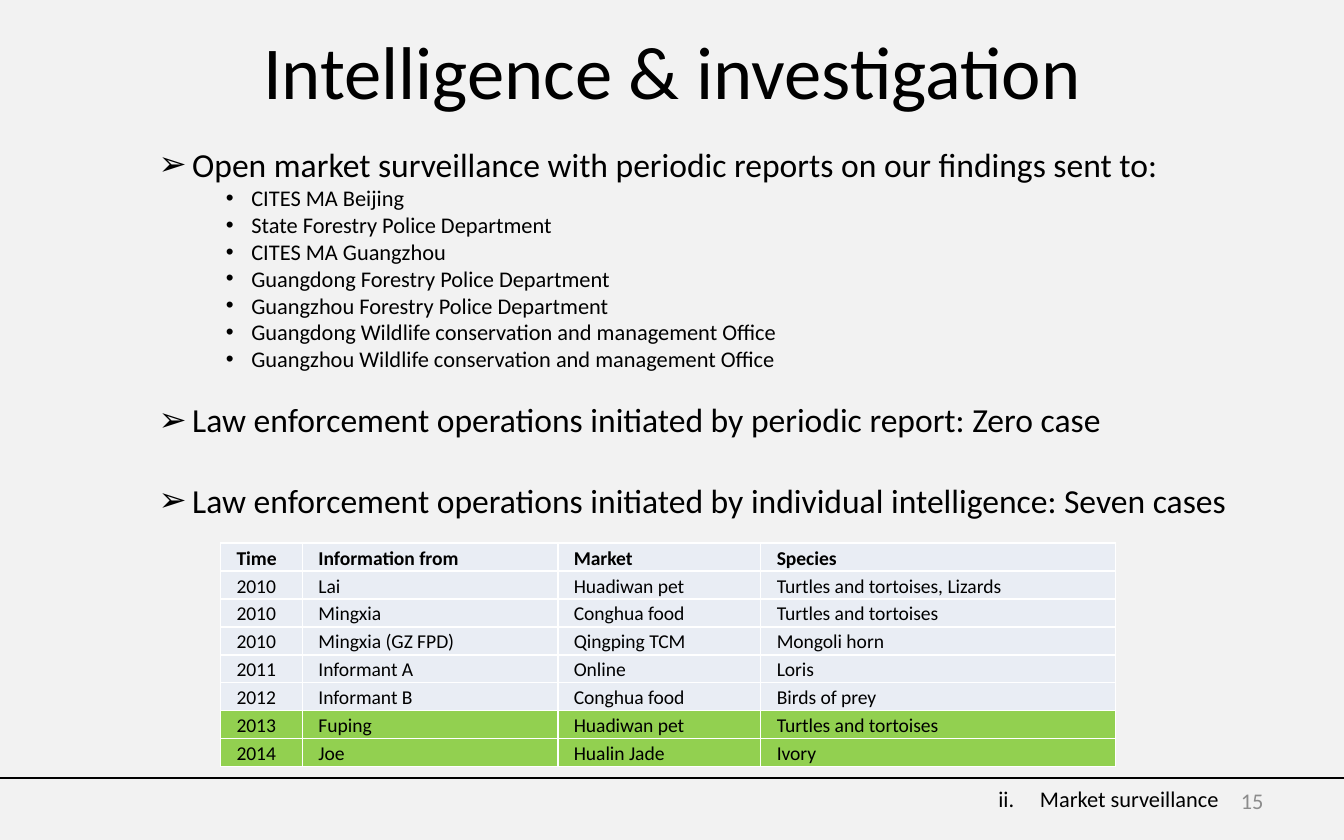
from lxml import etree
from pptx import Presentation
from pptx.dml.color import RGBColor
from pptx.enum.shapes import MSO_CONNECTOR
from pptx.enum.text import MSO_ANCHOR, MSO_AUTO_SIZE, PP_ALIGN
from pptx.oxml.ns import qn
from pptx.util import Inches, Pt

STRAIGHT = MSO_CONNECTOR.STRAIGHT
TOP, MIDDLE = MSO_ANCHOR.TOP, MSO_ANCHOR.MIDDLE
NO_FIT = MSO_AUTO_SIZE.NONE
LEFT, CENTER, RIGHT = PP_ALIGN.LEFT, PP_ALIGN.CENTER, PP_ALIGN.RIGHT

FONT = "Calibri"
BLACK = RGBColor(0x00, 0x00, 0x00)
GREY = RGBColor(0x8C, 0x8C, 0x8C)
BACKGROUND = RGBColor(0xF2, 0xF2, 0xF2)
PALE_BLUE = RGBColor(0xE9, 0xED, 0xF4)
GREEN = RGBColor(0x92, 0xD0, 0x50)
WHITE = RGBColor(0xFF, 0xFF, 0xFF)

FOOTER_TOP = 5.79
RECIPIENTS = [
    "CITES MA Beijing",
    "State Forestry Police Department",
    "CITES MA Guangzhou",
    "Guangdong Forestry Police Department",
    "Guangzhou Forestry Police Department",
    "Guangdong Wildlife conservation and management Office",
    "Guangzhou Wildlife conservation and management Office",
]
COLUMN_WIDTHS = [0.61, 1.9, 1.51, 2.64]
ROW_HEIGHT = 0.208
CASES = [
    ("Time", "Information from", "Market", "Species"),
    ("2010", "Lai", "Huadiwan pet", "Turtles and tortoises, Lizards"),
    ("2010", "Mingxia", "Conghua food", "Turtles and tortoises"),
    ("2010", "Mingxia (GZ FPD)", "Qingping TCM", "Mongoli horn"),
    ("2011", "Informant A", "Online", "Loris"),
    ("2012", "Informant B", "Conghua food", "Birds of prey"),
    ("2013", "Fuping", "Huadiwan pet", "Turtles and tortoises"),
    ("2014", "Joe", "Hualin Jade", "Ivory"),
]
HIGHLIGHTED_YEARS = ("2013", "2014")


def place(sp, left, top, width, height):
    sp.left, sp.top = Inches(left), Inches(top)
    sp.width, sp.height = Inches(width), Inches(height)


def add_run(p, text, size, color=BLACK, bold=False):
    r = p.add_run()
    r.text = text
    r.font.name = FONT
    r.font.size = Pt(size)
    r.font.bold = bold
    r.font.color.rgb = color


def set_bullet(p, left, hang, tag, **attributes):
    pPr = p._p.get_or_add_pPr()
    pPr.set("marL", str(Inches(left)))
    pPr.set("indent", str(-Inches(hang)))
    etree.SubElement(pPr, qn("a:buFont"), typeface="Arial")
    etree.SubElement(pPr, qn(tag), **attributes)


def add_title(s, text):
    sp = s.shapes.title
    place(sp, 0.5, 0, 9, 1.04)
    tf = sp.text_frame
    tf.vertical_anchor = MIDDLE
    p = tf.paragraphs[0]
    p.alignment = CENTER
    add_run(p, text, 40)


def add_item(tf, text, level=0, gap=0):
    p = tf.paragraphs[0] if not tf.paragraphs[0].runs else tf.add_paragraph()
    p.level = level
    if level:
        set_bullet(p, 0.69, 0.19, "a:buChar", char="•")
    else:
        set_bullet(p, 0.25, 0.25, "a:buChar", char="➢")
    p.alignment = LEFT
    p.space_before = Pt(gap)
    add_run(p, text, 12 if level else 18)


def add_body(s):
    sp = s.placeholders[1]
    place(sp, 1.08, 1.02, 8.92, 2.93)
    tf = sp.text_frame
    tf.word_wrap = True
    tf.auto_size = NO_FIT
    tf.vertical_anchor = TOP
    add_item(tf, "Open market surveillance with periodic reports on our findings sent to:")
    for recipient in RECIPIENTS:
        add_item(tf, recipient, level=1)
    add_item(tf, "Law enforcement operations initiated by periodic report: Zero case", gap=14.5)
    add_item(tf, "Law enforcement operations initiated by individual intelligence: Seven cases", gap=21.5)


def set_borders(cell):
    tcPr = cell._tc.get_or_add_tcPr()
    for i, side in enumerate(("a:lnL", "a:lnR", "a:lnT", "a:lnB")):
        ln = etree.Element(qn(side), w=str(Pt(1)))
        fill = etree.SubElement(ln, qn("a:solidFill"))
        etree.SubElement(fill, qn("a:srgbClr"), val=str(WHITE))
        tcPr.insert(i, ln)


def fill_cell(cell, text, fill, bold):
    cell.margin_left, cell.margin_right = Inches(0.12), Inches(0.05)
    cell.margin_top = cell.margin_bottom = 0
    cell.fill.solid()
    cell.fill.fore_color.rgb = fill
    set_borders(cell)
    p = cell.text_frame.paragraphs[0]
    p.line_spacing = 1.15
    add_run(p, text, 10.5, bold=bold)


def add_case_table(s):
    table = s.shapes.add_table(
        len(CASES), len(COLUMN_WIDTHS), Inches(1.64), Inches(4.04),
        Inches(sum(COLUMN_WIDTHS)), Inches(ROW_HEIGHT * len(CASES))).table
    table.first_row = table.horz_banding = False
    for column, width in zip(table.columns, COLUMN_WIDTHS):
        column.width = Inches(width)
    for i, case in enumerate(CASES):
        table.rows[i].height = Inches(ROW_HEIGHT)
        fill = GREEN if case[0] in HIGHLIGHTED_YEARS else PALE_BLUE
        for j, text in enumerate(case):
            fill_cell(table.cell(i, j), text, fill, bold=i == 0)


def add_text_box(s, left, width, height):
    sp = s.shapes.add_textbox(Inches(left), Inches(FOOTER_TOP), Inches(width), Inches(height))
    sp.text_frame.word_wrap = True
    return sp.text_frame


def add_footer(s):
    tf = add_text_box(s, 7.17, 2.33, 0.33)
    tf.vertical_anchor = MIDDLE
    p = tf.paragraphs[0]
    p.alignment = RIGHT
    add_run(p, "15", 12, GREY)

    p = add_text_box(s, 7.33, 1.9, 0.3).paragraphs[0]
    set_bullet(p, 0.31, 0.31, "a:buAutoNum", type="romanLcPeriod", startAt="2")
    add_run(p, "Market surveillance", 12)

    line = s.shapes.add_connector(
        STRAIGHT, Inches(10), Inches(FOOTER_TOP), 0, Inches(FOOTER_TOP))
    line.line.color.rgb = BLACK
    line.line.width = Pt(0.75)
    etree.SubElement(line._element.spPr, qn("a:effectLst"))


def main():
    prs = Presentation()
    prs.slide_width, prs.slide_height = Inches(10), Inches(6.25)
    s = prs.slides.add_slide(prs.slide_layouts[1])
    s.background.fill.solid()
    s.background.fill.fore_color.rgb = BACKGROUND
    add_title(s, "Intelligence & investigation")
    add_body(s)
    add_case_table(s)
    add_footer(s)
    prs.save("out.pptx")


if __name__ == "__main__":
    main()
